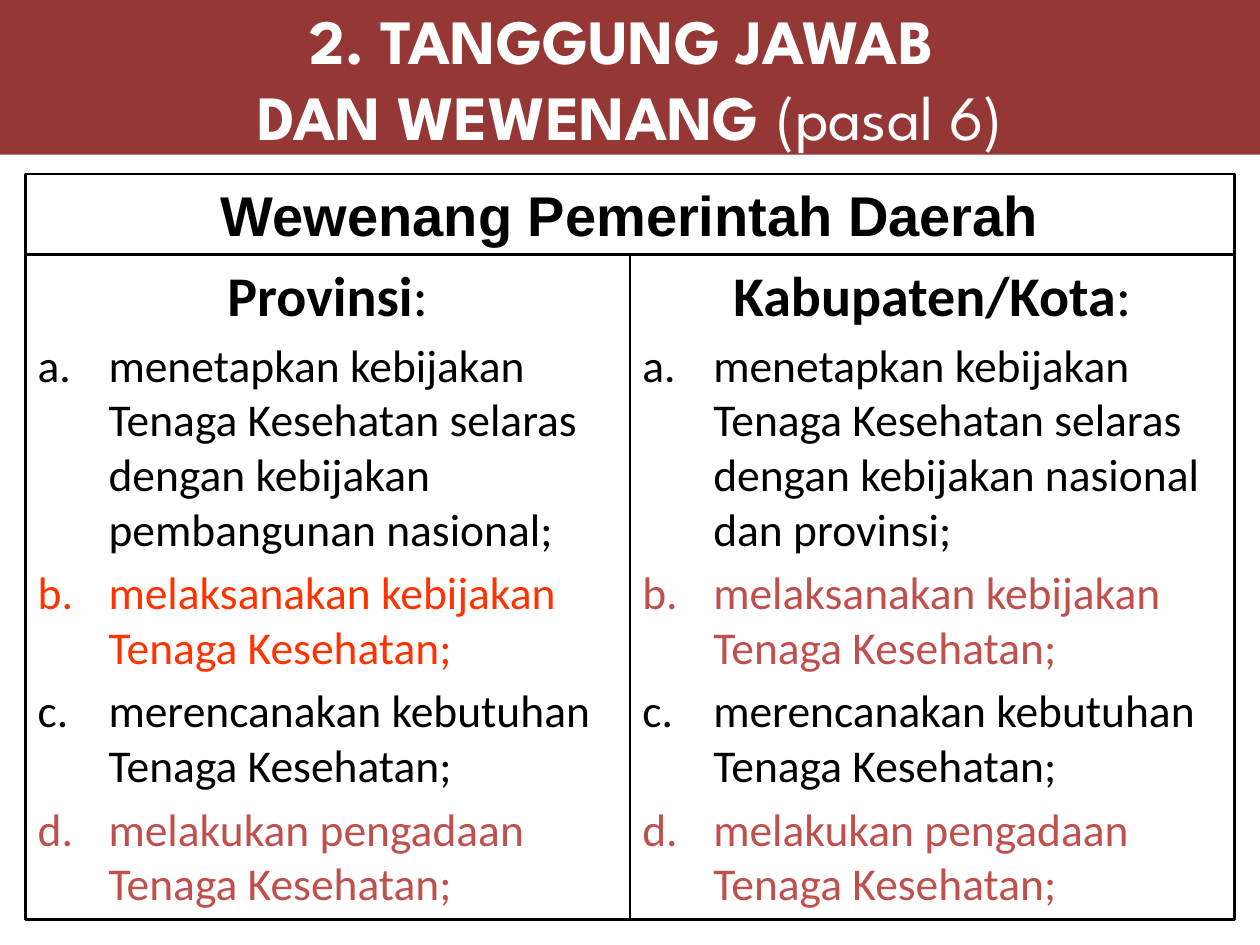
from lxml import etree
from pptx import Presentation
from pptx.dml.color import RGBColor
from pptx.enum.shapes import MSO_SHAPE
from pptx.enum.text import MSO_ANCHOR, PP_ALIGN
from pptx.oxml.ns import qn
from pptx.util import Cm, Pt

RECT = MSO_SHAPE.RECTANGLE
TOP, MIDDLE = MSO_ANCHOR.TOP, MSO_ANCHOR.MIDDLE
LEFT, CENTER = PP_ALIGN.LEFT, PP_ALIGN.CENTER

HUES = {"band": "953735", "white": "FFFFFF", "black": "000000",
        "orange": "FF3300", "red": "C0504D"}
TITLE = {"name": "League Spartan", "size": Pt(36), "bold": True}
LABEL = {"name": "Arial", "size": Pt(32), "bold": True}
HEAD = {"name": "Calibri", "size": Pt(32), "bold": True}
ITEM = {"name": "Calibri", "size": Pt(26), "bold": False}


def add_box(left, top, width, height, anchor, fill=None):
    """Add a filled band, or an outlined box if no fill is given."""
    box = slide.shapes.add_shape(RECT, Cm(left), Cm(top), Cm(width), Cm(height))
    box.shadow.inherit = False
    if fill:
        box.fill.solid()
        box.fill.fore_color.rgb = RGBColor.from_string(HUES[fill])
        box.line.fill.background()
    else:
        box.fill.background()
        box.line.color.rgb = RGBColor.from_string(HUES["black"])
        box.line.width = Pt(1.5)
    frame = box.text_frame
    frame.word_wrap = True
    frame.vertical_anchor = anchor
    return frame


def add_para(frame, runs, look, hue, align=CENTER, space=0):
    """Fill the first empty paragraph or a new one with (text, changes) runs."""
    para = frame.paragraphs[0]
    if para.runs:
        para = frame.add_paragraph()
    para.alignment = align
    para.space_before = Pt(space)
    for text, change in runs:
        run = para.add_run()
        run.text = text
        for key, value in {**look, **change}.items():
            setattr(run.font, key, value)
        run.font.color.rgb = RGBColor.from_string(HUES[hue])
    return para


deck = Presentation()
deck.slide_width, deck.slide_height = Cm(25.4), Cm(19.05)
slide = deck.slides.add_slide(deck.slide_layouts[6])

title = add_box(0, 0, 25.4, 3.12, MIDDLE, "band")
add_para(title, [("2. TANGGUNG JAWAB ", {})], TITLE, "white")
add_para(title, [("DAN WEWENANG ", {}), ("(pasal 6)", {"bold": False})],
         TITLE, "white")

# Two equal columns under one label
edge, width, top = 0.51, 12.19, 5.13
columns = [
    ("Provinsi", "pembangunan nasional;", "orange"),
    ("Kabupaten/Kota", "nasional dan provinsi;", "red"),
]
for col, (name, ending, accent) in enumerate(columns):
    frame = add_box(edge + col * width, top, width, 13.41, TOP)
    add_para(frame, [(name, {}), (":", {"bold": False})], HEAD, "black",
             space=6.4)
    duties = [
        ("menetapkan kebijakan Tenaga Kesehatan selaras dengan kebijakan "
         + ending, "black"),
        ("melaksanakan kebijakan Tenaga Kesehatan;", accent),
        ("merencanakan kebutuhan Tenaga Kesehatan;", "black"),
        ("melakukan pengadaan Tenaga Kesehatan;", "red"),
    ]
    for duty, hue in duties:
        para = add_para(frame, [(duty, {})], ITEM, hue, LEFT, 5.2)
        props = para._p.get_or_add_pPr()
        props.set("marL", str(Cm(1.43)))
        props.set("indent", str(-Cm(1.43)))
        font = etree.SubElement(props, qn("a:buFont"))
        font.set("typeface", "+mj-lt")
        mark = etree.SubElement(props, qn("a:buAutoNum"))
        mark.set("type", "alphaLcPeriod")

label = add_box(edge, 3.51, 2 * width, 1.62, TOP)
add_para(label, [("Wewenang Pemerintah Daerah", {})], LABEL, "black")

deck.save("out.pptx")
